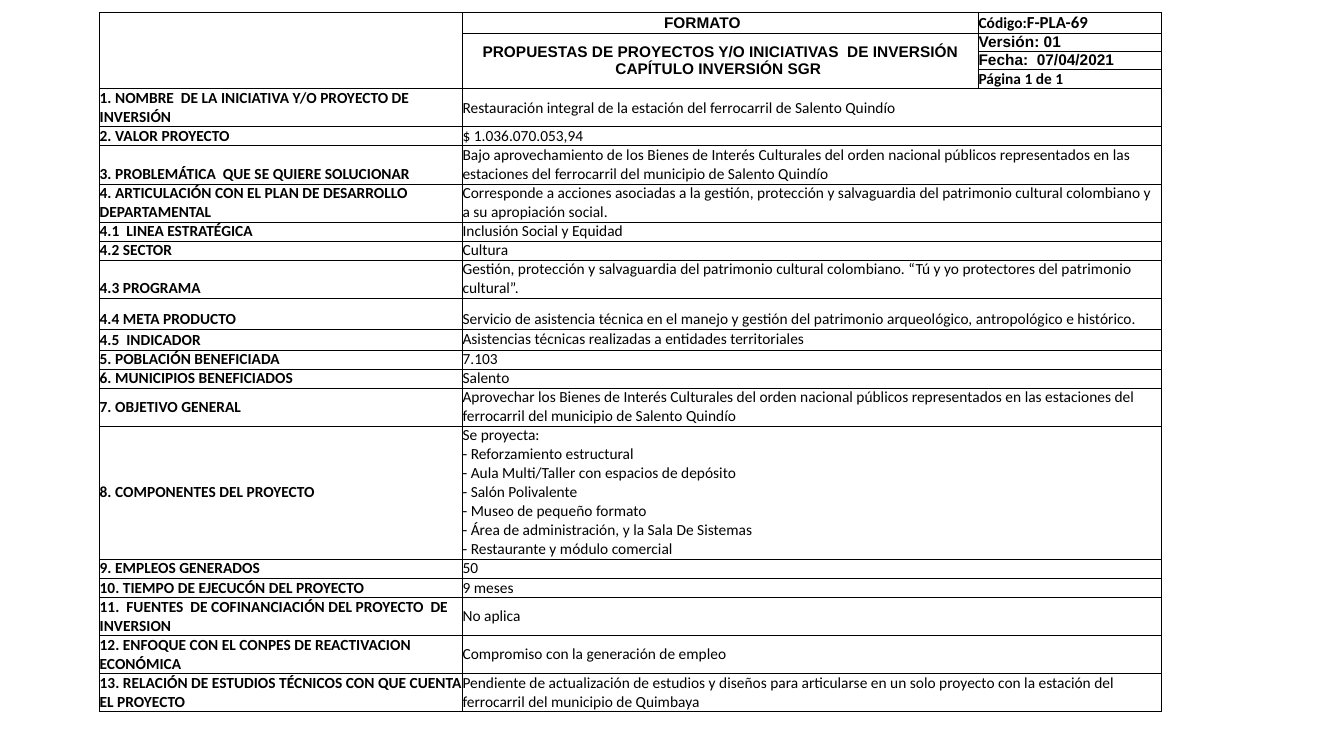
from lxml import etree
from pptx import Presentation
from pptx import util as u
from pptx.dml.color import RGBColor
from pptx.enum import text
from pptx.oxml.ns import qn

BLACK = RGBColor(0, 0, 0)
MIDDLE, BOTTOM, TOP = (text.MSO_ANCHOR.MIDDLE, text.MSO_ANCHOR.BOTTOM,
                       text.MSO_ANCHOR.TOP)
LEFT, CENTER, JUSTIFY = (text.PP_ALIGN.LEFT, text.PP_ALIGN.CENTER,
                         text.PP_ALIGN.JUSTIFY)
ONE_LINE, TWO_LINES = 13.5, 27

# Column widths, and header row heights
COLUMNS = [259.2, 368.6, 130.6]
HEADER_HEIGHTS = [15, 13, 13, 13.5]

# Header cells: row, column, anchor, alignment, font, spans of (text, size)
HEADER = [
    (0, 1, MIDDLE, CENTER, "Arial", [("FORMATO", 11)]),
    (1, 1, MIDDLE, CENTER, "Arial",
     [("PROPUESTAS DE PROYECTOS Y/O INICIATIVAS  DE INVERSIÓN CAPÍTULO INVERSIÓN SGR ", 11)]),
    (0, 2, MIDDLE, LEFT, "Calibri", [("Código:", 11), ("F-PLA-69", 12)]),
    (1, 2, MIDDLE, JUSTIFY, "Arial", [("Versión: 01", 11)]),
    (2, 2, MIDDLE, JUSTIFY, "Arial", [("Fecha:  07/04/2021", 11)]),
    (3, 2, BOTTOM, LEFT, "Calibri", [("Página 1 de 1", 11)]),
]

# Project rows: height, label anchor, label, value anchor, value
PROJECT = [
    (TWO_LINES, BOTTOM, "1. NOMBRE  DE LA INICIATIVA Y/O PROYECTO DE INVERSIÓN",
     MIDDLE, "Restauración integral de la estación del ferrocarril de Salento Quindío"),
    (ONE_LINE, BOTTOM, "2. VALOR PROYECTO", MIDDLE, "$ 1.036.070.053,94"),
    (TWO_LINES, BOTTOM, "3. PROBLEMÁTICA  QUE SE QUIERE SOLUCIONAR",
     MIDDLE, "Bajo aprovechamiento de los Bienes de Interés Culturales del orden nacional "
     "públicos representados en las estaciones del ferrocarril del municipio de Salento Quindío"),
    (TWO_LINES, BOTTOM, "4. ARTICULACIÓN CON EL PLAN DE DESARROLLO DEPARTAMENTAL",
     MIDDLE, "Corresponde a acciones asociadas a la gestión, protección y salvaguardia del "
     "patrimonio cultural colombiano y a su apropiación social."),
    (ONE_LINE, BOTTOM, "4.1  LINEA ESTRATÉGICA", MIDDLE, "Inclusión Social y Equidad"),
    (ONE_LINE, BOTTOM, "4.2 SECTOR", MIDDLE, "Cultura"),
    (TWO_LINES, BOTTOM, "4.3 PROGRAMA",
     MIDDLE, "Gestión, protección y salvaguardia del patrimonio cultural colombiano. "
     "“Tú y yo protectores del patrimonio cultural”."),
    (22, BOTTOM, "4.4 META PRODUCTO",
     BOTTOM, "Servicio de asistencia técnica en el manejo y gestión del patrimonio "
     "arqueológico, antropológico e histórico."),
    (15, BOTTOM, "4.5  INDICADOR",
     MIDDLE, "Asistencias técnicas realizadas a entidades territoriales"),
    (ONE_LINE, BOTTOM, "5. POBLACIÓN BENEFICIADA", BOTTOM, "7.103"),
    (ONE_LINE, BOTTOM, "6. MUNICIPIOS BENEFICIADOS", MIDDLE, "Salento"),
    (TWO_LINES, MIDDLE, "7. OBJETIVO GENERAL",
     TOP, "Aprovechar los Bienes de Interés Culturales del orden nacional públicos "
     "representados en las estaciones del ferrocarril del municipio de Salento Quindío"),
    (94.5, MIDDLE, "8. COMPONENTES DEL PROYECTO",
     MIDDLE, "Se proyecta:\n- Reforzamiento estructural\n"
     "- Aula Multi/Taller con espacios de depósito\n- Salón Polivalente\n"
     "- Museo de pequeño formato\n- Área de administración, y la Sala De Sistemas\n"
     "- Restaurante y módulo comercial"),
    (ONE_LINE, MIDDLE, "9. EMPLEOS GENERADOS", MIDDLE, "50"),
    (ONE_LINE, MIDDLE, "10. TIEMPO DE EJECUCÓN DEL PROYECTO", MIDDLE, "9 meses"),
    (TWO_LINES, MIDDLE, "11.  FUENTES  DE COFINANCIACIÓN DEL PROYECTO  DE INVERSION",
     MIDDLE, "No aplica"),
    (TWO_LINES, MIDDLE, "12. ENFOQUE CON EL CONPES DE REACTIVACION ECONÓMICA",
     MIDDLE, "Compromiso con la generación de empleo"),
    (TWO_LINES, MIDDLE, "13. RELACIÓN DE ESTUDIOS TÉCNICOS CON QUE CUENTA EL PROYECTO",
     MIDDLE, "Pendiente de actualización de estudios y diseños para articularse en un solo "
     "proyecto con la estación del ferrocarril del municipio de Quimbaya"),
]


def write(cell, anchor, align, font, bold, lines):
    """Fill a cell; each line is a list of (text, size) spans."""
    cell.vertical_anchor = anchor
    for number, spans in enumerate(lines):
        frame = cell.text_frame
        para = frame.add_paragraph() if number else frame.paragraphs[0]
        para.alignment = align
        for words, size in spans:
            span = para.add_run()
            span.text = words
            span.font.color.rgb = BLACK
            look = {"name": font, "size": u.Pt(size), "bold": bold}
            for name, value in look.items():
                setattr(span.font, name, value)


def outline(cell):
    """Draw a thin black border on every side of a cell."""
    properties = cell._tc.get_or_add_tcPr()
    for side in ("lnL", "lnR", "lnT", "lnB"):
        line = etree.SubElement(properties, qn("a:" + side), w=str(u.Pt(0.5)))
        fill = etree.SubElement(line, qn("a:solidFill"))
        etree.SubElement(fill, qn("a:srgbClr"), val=str(BLACK))


deck = Presentation()
deck.slide_width, deck.slide_height = u.Pt(960), u.Pt(540)
page = deck.slides.add_slide(deck.slide_layouts[6])

# Table grid
heights = HEADER_HEIGHTS + [row[0] for row in PROJECT]
table = page.shapes.add_table(
    len(heights), len(COLUMNS), u.Pt(71.2), u.Pt(8.8),
    u.Pt(sum(COLUMNS)), u.Pt(sum(heights))).table
table.first_row = table.horz_banding = False
for column, width in zip(table.columns, COLUMNS):
    column.width = u.Pt(width)
for row, height in zip(table.rows, heights):
    row.height = u.Pt(height)
for cell in table.iter_cells():
    for side in ("left", "right", "top", "bottom"):
        setattr(cell, "margin_" + side, 0)
    outline(cell)
    cell.fill.background()
    # Small end mark, so that empty cells do not stretch their row
    etree.SubElement(cell.text_frame.paragraphs[0]._p, qn("a:endParaRPr"), sz="1000")

# Form header
table.cell(0, 0).merge(table.cell(3, 0))
table.cell(1, 1).merge(table.cell(3, 1))
for row, column, anchor, align, font, spans in HEADER:
    write(table.cell(row, column), anchor, align, font, True, [spans])
table.cell(0, 1).margin_right = u.Pt(26)

# Project data
for row, (_, label_anchor, label, value_anchor, value) in enumerate(
        PROJECT, start=len(HEADER_HEIGHTS)):
    table.cell(row, 1).merge(table.cell(row, 2))
    write(table.cell(row, 0), label_anchor, LEFT, "Calibri", True, [[(label, 11)]])
    write(table.cell(row, 1), value_anchor, LEFT, "Calibri", False,
          [[(line, 11)] for line in value.split("\n")])

deck.save("out.pptx")
